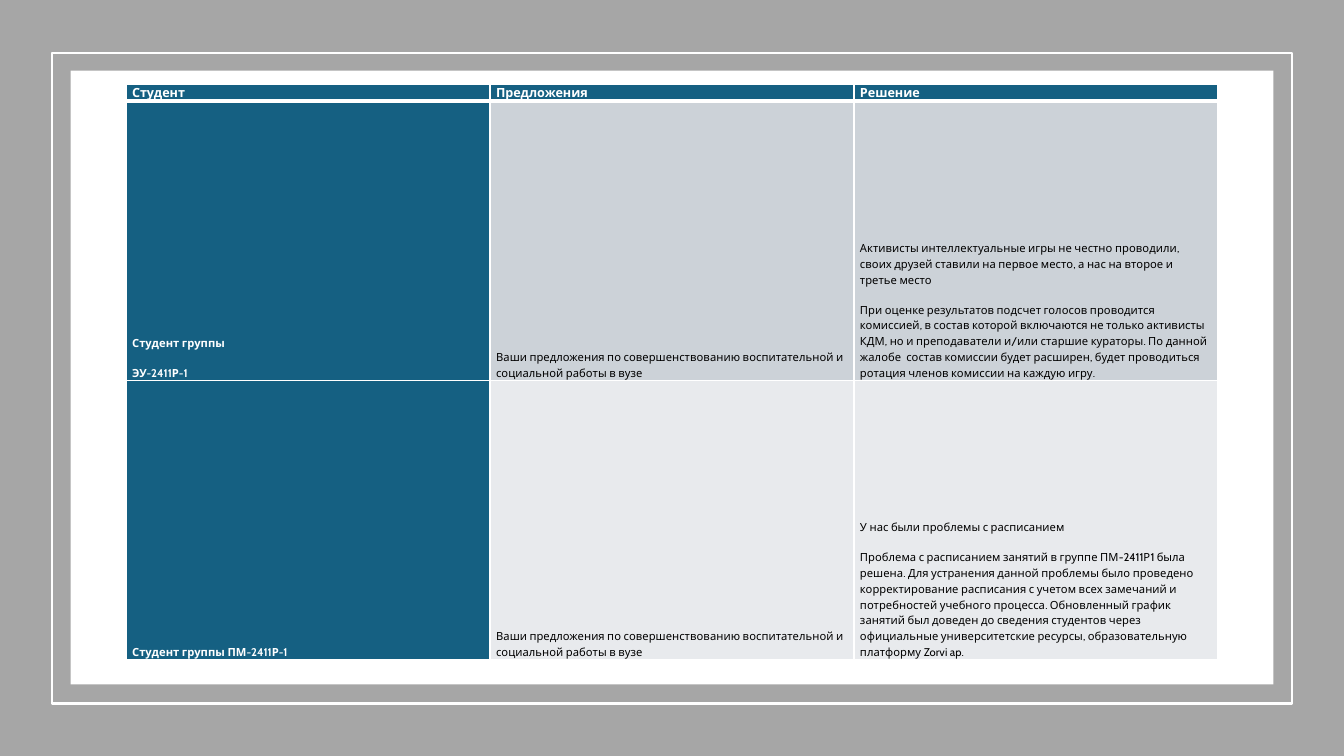
from dataclasses import dataclass

from lxml import etree
from pptx import Presentation
from pptx import util as u
from pptx.dml.color import RGBColor
from pptx.enum import shapes, text
from pptx.oxml.ns import qn


@dataclass(frozen=True)
class Theme:
    font: str = "Cabin"
    backdrop: str = "A6A6A6"
    white: str = "FFFFFF"
    black: str = "000000"
    accent: str = "156082"
    bands: tuple = ("CCD2D8", "E8EAED")
    header_size: float = 9
    body_size: float = 8
    frame_width: float = 1.5
    grid_width: float = 1
    header_rule: float = 3


class SlideBuilder:
    def __init__(self, slide, theme):
        self.slide = slide
        self.theme = theme

    def rectangle(self, left, top, width, height, fill=None, line=None):
        shape = self.slide.shapes.add_shape(
            shapes.MSO_SHAPE.RECTANGLE, *map(u.Inches, (left, top, width, height)))
        shape.shadow.inherit = False
        if fill:
            shape.fill.solid()
            shape.fill.fore_color.rgb = RGBColor.from_string(fill)
        else:
            shape.fill.background()
        if line:
            shape.line.color.rgb = RGBColor.from_string(line)
            shape.line.width = u.Pt(self.theme.frame_width)
        else:
            shape.line.fill.background()

    def borders(self, cell, **widths):
        properties = cell._tc.get_or_add_tcPr()
        for side, width in widths.items():
            line = etree.SubElement(properties, qn(f"a:ln{side}"), w=str(u.Pt(width)))
            fill = etree.SubElement(line, qn("a:solidFill"))
            etree.SubElement(fill, qn("a:srgbClr"), val=self.theme.white)

    def cell(self, cell, paragraphs, fill, is_header, is_strong):
        theme = self.theme
        cell.margin_left = cell.margin_right = u.Inches(0.06)
        cell.margin_top = cell.margin_bottom = 0
        cell.vertical_anchor = text.MSO_ANCHOR.TOP if is_header else text.MSO_ANCHOR.BOTTOM
        for index, words in enumerate(paragraphs):
            frame = cell.text_frame
            paragraph = frame.add_paragraph() if index else frame.paragraphs[0]
            paragraph.line_spacing = 1.07 if is_header else 1.15
            paragraph.space_after = u.Pt(8 if is_header else 10)
            run = paragraph.add_run()
            run.text = words
            run.font.name = theme.font
            run.font.size = u.Pt(theme.header_size if is_header else theme.body_size)
            run.font.bold = is_strong
            run.font.color.rgb = RGBColor.from_string(theme.white if is_strong else theme.black)
        cell.fill.solid()
        cell.fill.fore_color.rgb = RGBColor.from_string(fill)

    def table(self, left, top, column_width, row_heights, rows):
        theme = self.theme
        columns = len(rows[0])
        table = self.slide.shapes.add_table(
            len(rows), columns, u.Inches(left), u.Inches(top),
            u.Inches(column_width * columns), u.Inches(sum(row_heights))).table
        for column in table.columns:
            column.width = u.Inches(column_width)
        for row_index, (height, row) in enumerate(zip(row_heights, rows)):
            table.rows[row_index].height = u.Inches(height)
            is_header = row_index == 0
            for column_index, paragraphs in enumerate(row):
                cell = table.cell(row_index, column_index)
                is_strong = is_header or column_index == 0
                fill = theme.accent if is_strong else theme.bands[(row_index - 1) % 2]
                grid = theme.grid_width
                self.borders(cell, L=grid, R=grid,
                             T=theme.header_rule if row_index == 1 else grid,
                             B=theme.header_rule if is_header else grid)
                self.cell(cell, paragraphs, fill, is_header, is_strong)


QUESTION = "Ваши предложения по совершенствованию воспитательной и социальной работы в вузе"
ROWS = [
    [["Студент"], ["Предложения"], ["Решение"]],
    [
        ["Студент группы", "ЭУ-2411Р-1"],
        [QUESTION],
        ["Активисты интеллектуальные игры не честно проводили, своих друзей ставили "
         "на первое место, а нас на второе и третье место",
         "При оценке результатов подсчет голосов проводится комиссией, в состав которой "
         "включаются не только активисты КДМ, но и преподаватели и/или старшие кураторы. "
         "По данной жалобе  состав комиссии будет расширен, будет проводиться ротация "
         "членов комиссии на каждую игру."],
    ],
    [
        ["Студент группы ПМ-2411Р-1"],
        [QUESTION],
        ["У нас были проблемы с расписанием",
         "Проблема с расписанием занятий в группе ПМ-2411Р1 была  решена. Для устранения "
         "данной проблемы было проведено корректирование расписания с учетом всех замечаний "
         "и потребностей учебного процесса. Обновленный график занятий был доведен до "
         "сведения студентов через официальные университетские ресурсы, образовательную "
         "платформу Zorvi ap."],
    ],
]


def main():
    presentation = Presentation()
    presentation.slide_width = u.Inches(13.33)
    presentation.slide_height = u.Inches(7.5)
    theme = Theme()
    builder = SlideBuilder(presentation.slides.add_slide(presentation.slide_layouts[6]), theme)

    # Backdrop, outline and white panel
    builder.rectangle(0, 0, 13.33, 7.5, fill=theme.backdrop)
    builder.rectangle(0.52, 0.53, 12.29, 6.45, line=theme.white)
    builder.rectangle(0.7, 0.7, 11.93, 6.09, fill=theme.white)

    # Student suggestions and decisions
    builder.table(1.25, 0.84, 3.61, (0.16, 2.77, 2.77), ROWS)

    presentation.save("out.pptx")


if __name__ == "__main__":
    main()
